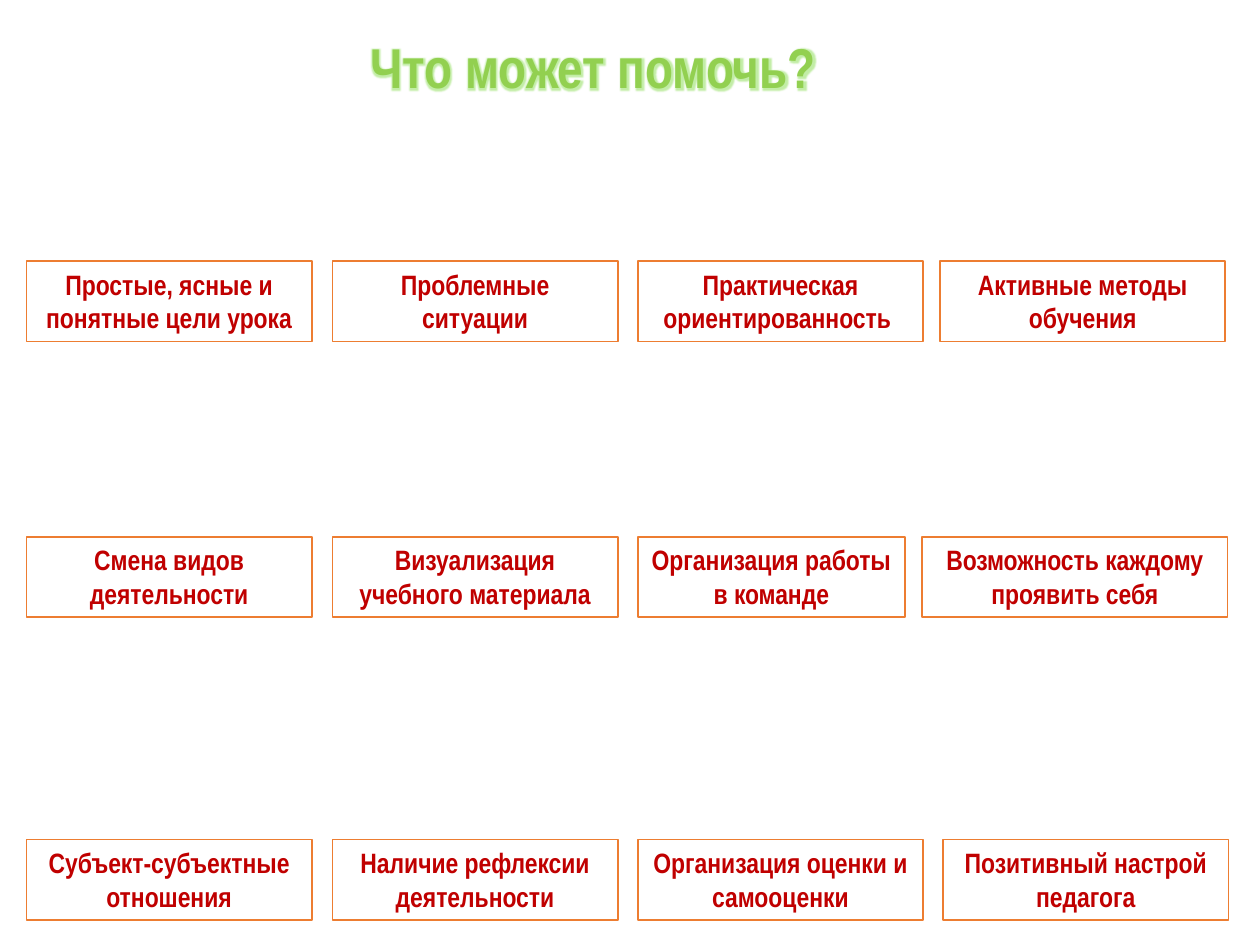
from lxml import etree
from pptx import Presentation
from pptx.dml.color import RGBColor
from pptx.enum.shapes import MSO_SHAPE
from pptx.enum.text import MSO_ANCHOR, MSO_AUTO_SIZE, PP_ALIGN
from pptx.oxml import parse_xml
from pptx.util import Pt

FONT = "Arial Narrow"
NS = "http://schemas.openxmlformats.org/drawingml/2006/main"
CARD_W, CARD_H = 163, 46
COLUMNS = (15.2, 190, 364.5)

# Row top, (left, width) of the last two cards, and the wording
ROWS = [
    (149.2, (364.5, CARD_W), (537.2, CARD_W),
     ["Простые, ясные и понятные цели урока", "Проблемные ситуации",
      "Практическая ориентированность ", "Активные методы обучения"]),
    (306.7, (364.5, 152.6), (527, 174.5),
     ["Смена видов деятельности", "Визуализация учебного материала",
      "Организация работы в команде", "Возможность каждому проявить себя"]),
    (479.7, (364.5, CARD_W), (539, CARD_W),
     ["Субъект-субъектные отношения", "Наличие рефлексии деятельности",
      "Организация оценки и самооценки", "Позитивный настрой педагога"]),
]


def color(value):
    return RGBColor.from_string(value)


def set_font(font, size, value):
    font.name, font.size, font.bold = FONT, Pt(size), True
    font.color.rgb = color(value)


def add_outline_and_glow(r):
    """Give the run a dark outline and a soft green glow."""
    rpr = r.font._element if hasattr(r.font, "_element") else r._r.get_or_add_rPr()
    outline = parse_xml(
        f'<a:ln xmlns:a="{NS}" w="12700"><a:solidFill>'
        '<a:srgbClr val="385723"/></a:solidFill></a:ln>')
    glow = parse_xml(
        f'<a:effectLst xmlns:a="{NS}"><a:glow rad="63500">'
        '<a:srgbClr val="68D321"><a:alpha val="40000"/></a:srgbClr>'
        '</a:glow></a:effectLst>')
    rpr.insert(0, outline)
    rpr.find(etree.QName(NS, "solidFill").text).addnext(glow)


def add_title(slide, left, top, width, height):
    tf = slide.shapes.add_textbox(Pt(left), Pt(top), Pt(width), Pt(height)).text_frame
    tf.word_wrap = False
    tf.auto_size = MSO_AUTO_SIZE.SHAPE_TO_FIT_TEXT
    p = tf.paragraphs[0]
    p.alignment = PP_ALIGN.CENTER
    r = p.add_run()
    r.text = "Что может помочь?"
    set_font(r.font, 32, "92D050")
    add_outline_and_glow(r)


def add_card(slide, left, top, width, height, text):
    sp = slide.shapes.add_shape(
        MSO_SHAPE.RECTANGLE, Pt(left), Pt(top), Pt(width), Pt(height))
    sp.shadow.inherit = False
    sp.fill.solid()
    sp.fill.fore_color.rgb = color("FFFFFF")
    sp.line.color.rgb = color("ED7D31")
    sp.line.width = Pt(1)
    tf = sp.text_frame
    tf.word_wrap = True
    tf.auto_size = MSO_AUTO_SIZE.SHAPE_TO_FIT_TEXT
    tf.vertical_anchor = MSO_ANCHOR.TOP
    p = tf.paragraphs[0]
    p.text = text
    p.alignment = PP_ALIGN.CENTER
    set_font(p.font, 16, "C00000")


def add_card_row(slide, top, third, fourth, texts):
    places = [(left, CARD_W) for left in COLUMNS[:2]] + [third, fourth]
    for (left, width), text in zip(places, texts):
        add_card(slide, left, top, width, CARD_H, text)


def main():
    prs = Presentation()
    prs.slide_width, prs.slide_height = Pt(720), Pt(540)
    slide = prs.slides.add_slide(prs.slide_layouts[6])
    for row in ROWS:
        add_card_row(slide, *row)
    add_title(slide, 201.6, 15.1, 275, 46)
    prs.save("out.pptx")


if __name__ == "__main__":
    main()
